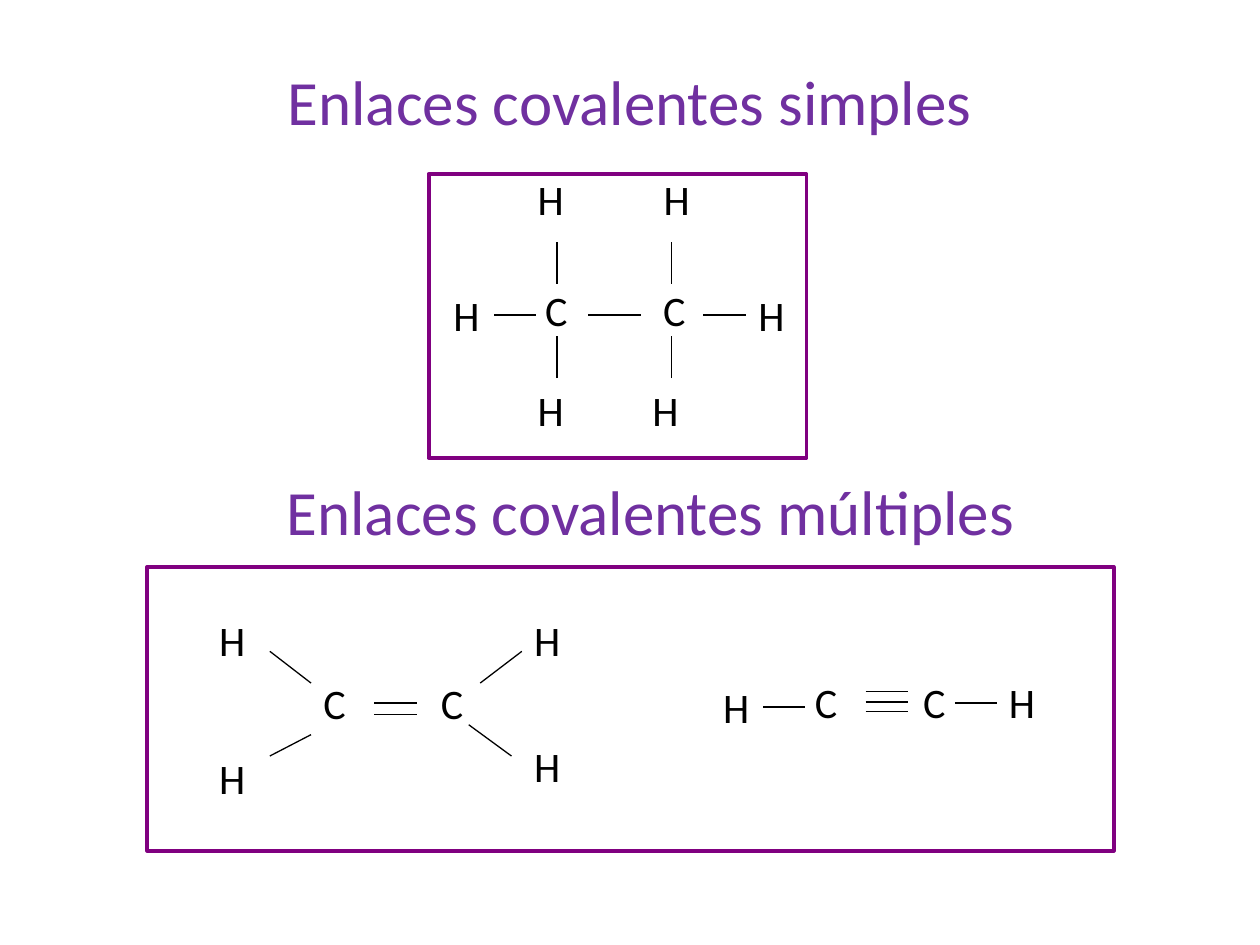
import pptx
import pptx.util
import pptx.dml.color
import pptx.enum.shapes
import pptx.enum.text
import pptx.oxml.ns
import lxml.etree

Cm, Pt = pptx.util.Cm, pptx.util.Pt
BLACK, PURPLE, FRAME, WHITE = "000000", "7030A0", "800080", "FFFFFF"
ATOM_SIZE = {"C": (0.97, 1.3), "H": (1.12, 1.27)}


def rgb(value):
    return pptx.dml.color.RGBColor.from_string(value)


def write(tf, text, size, color, frame_format, align):
    for name, value in frame_format.items():
        setattr(tf, name, value)
    p = tf.paragraphs[0]
    p.alignment = align
    r = p.add_run()
    r.text = text
    r.font.name, r.font.size, r.font.color.rgb = "Calibri", Pt(size), rgb(color)


prs = pptx.Presentation()
prs.slide_width, prs.slide_height = Cm(25.4), Cm(19.05)
s = prs.slides.add_slide(prs.slide_layouts[5])

# Frames around the structures, 60 % opaque
for box in [(2.97, 11.43, 19.48, 5.72), (8.64, 3.51, 7.62, 5.72)]:
    sp = s.shapes.add_shape(pptx.enum.shapes.MSO_SHAPE.RECTANGLE, *map(Cm, box))
    sp.shadow.inherit = False
    sp.fill.solid()
    sp.fill.fore_color.rgb = rgb(WHITE)
    color = sp.fill._xPr.find(".//" + pptx.oxml.ns.qn("a:srgbClr"))
    lxml.etree.SubElement(color, pptx.oxml.ns.qn("a:alpha"), val="60000")
    sp.line.color.rgb = rgb(FRAME)
    sp.line.width = Pt(2.25)

# Atoms as (left, top), bonds as (x1, y1, x2, y2)
ethane = {
    "C": [(10.74, 5.61), (13.12, 5.61)],
    "H": [(15.04, 5.72), (8.89, 5.72), (13.13, 3.38),
          (12.9, 7.62), (10.59, 7.62), (10.59, 3.38)],
    "bonds": [(x, 6.35, x + 0.85, 6.35) for x in (9.96, 11.86, 12.07, 14.18)]
    + [(x, y, x, y - 0.84) for x in (11.23, 13.54) for y in (5.72, 7.62)],
}
ethyne = {
    "C": [(16.18, 13.51), (18.36, 13.51)],
    "H": [(20.09, 13.51), (14.33, 13.61)],
    "bonds": [(19.25, 14.17, 20.09, 14.17), (15.39, 14.25, 16.23, 14.25)]
    + [(17.45, y, 18.31, y) for y in (13.94, 14.15, 14.35)],
}
ethene = {
    "C": [(6.27, 13.54), (8.64, 13.54)],
    "H": [(10.52, 14.81), (4.17, 15.04), (10.52, 12.27), (4.17, 12.27)],
    "bonds": [(7.54, y, 8.41, y) for y in (14.17, 14.4)]
    + [(5.44, 15.24, 6.27, 14.81), (6.27, 13.77, 5.44, 13.13),
       (9.68, 13.77, 10.52, 13.13), (9.45, 14.61, 10.31, 15.24)],
}

# One group per molecule
atom_format = {"word_wrap": False,
               "auto_size": pptx.enum.text.MSO_AUTO_SIZE.SHAPE_TO_FIT_TEXT}
for molecule in (ethane, ethyne, ethene):
    group = s.shapes.add_group_shape()
    for symbol, size in ATOM_SIZE.items():
        for place in molecule[symbol]:
            sp = group.shapes.add_textbox(*map(Cm, place + size))
            write(sp.text_frame, symbol, 24, BLACK, atom_format,
                  pptx.enum.text.PP_ALIGN.LEFT)
    for ends in molecule["bonds"]:
        line = group.shapes.add_connector(
            pptx.enum.shapes.MSO_CONNECTOR.STRAIGHT, *map(Cm, ends))
        line.line.color.rgb = rgb(BLACK)
        line.line.width = Pt(0.75)
        lxml.etree.SubElement(line._element.spPr, pptx.oxml.ns.qn("a:effectLst"))

# Headings: the title placeholder and a matching text box
title = s.shapes.title
title.left, title.top, title.width, title.height = map(Cm, (1.9, 0.43, 21.59, 3.18))
subtitle = s.shapes.add_textbox(*map(Cm, (1.9, 8.69, 22.43, 3.18)))
heading_format = {"word_wrap": True,
                  "auto_size": pptx.enum.text.MSO_AUTO_SIZE.NONE,
                  "vertical_anchor": pptx.enum.text.MSO_ANCHOR.MIDDLE}
for sp, text in [(title, "Enlaces covalentes simples"),
                 (subtitle, "Enlaces covalentes múltiples")]:
    write(sp.text_frame, text, 36, PURPLE, heading_format,
          pptx.enum.text.PP_ALIGN.CENTER)

prs.save("out.pptx")
